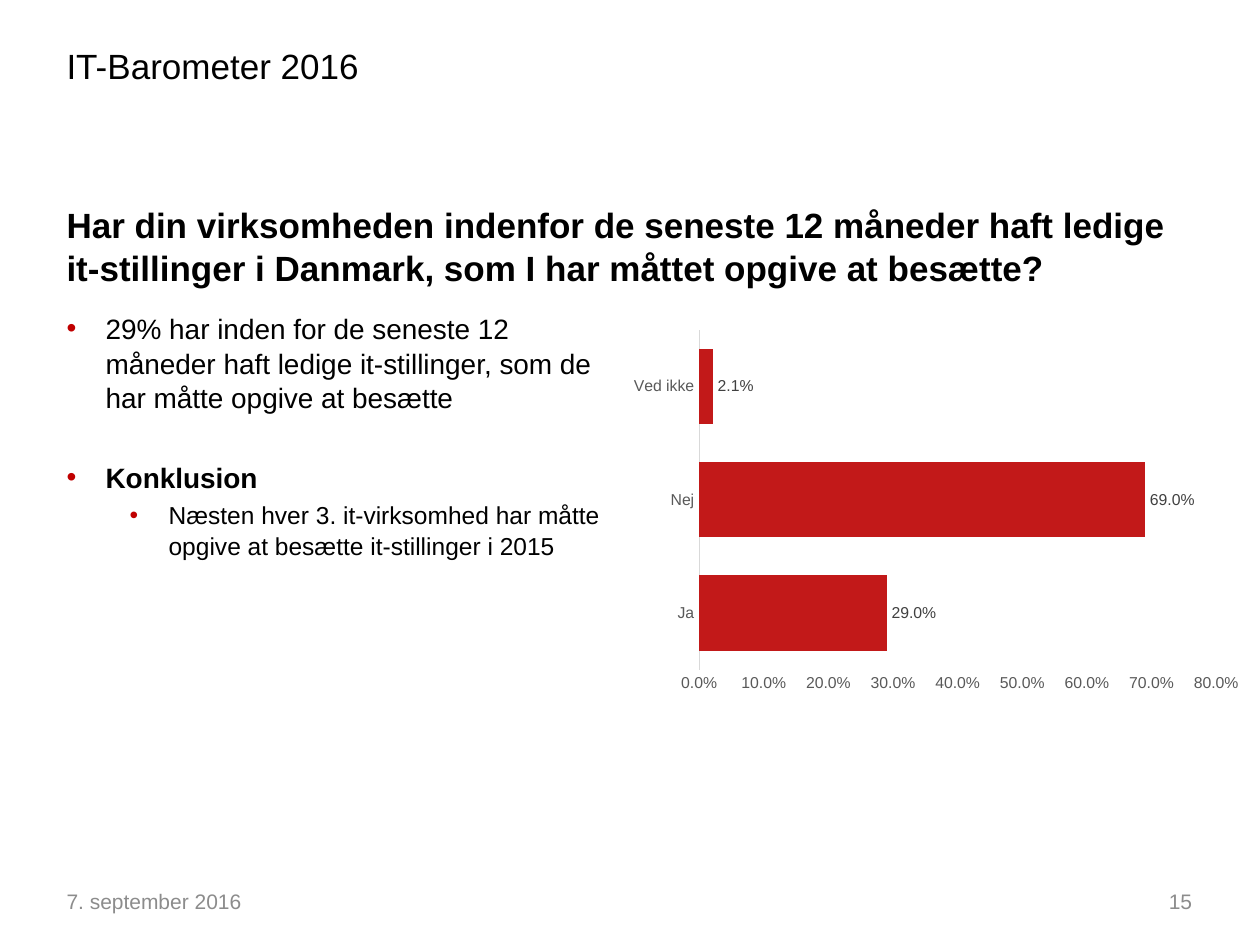
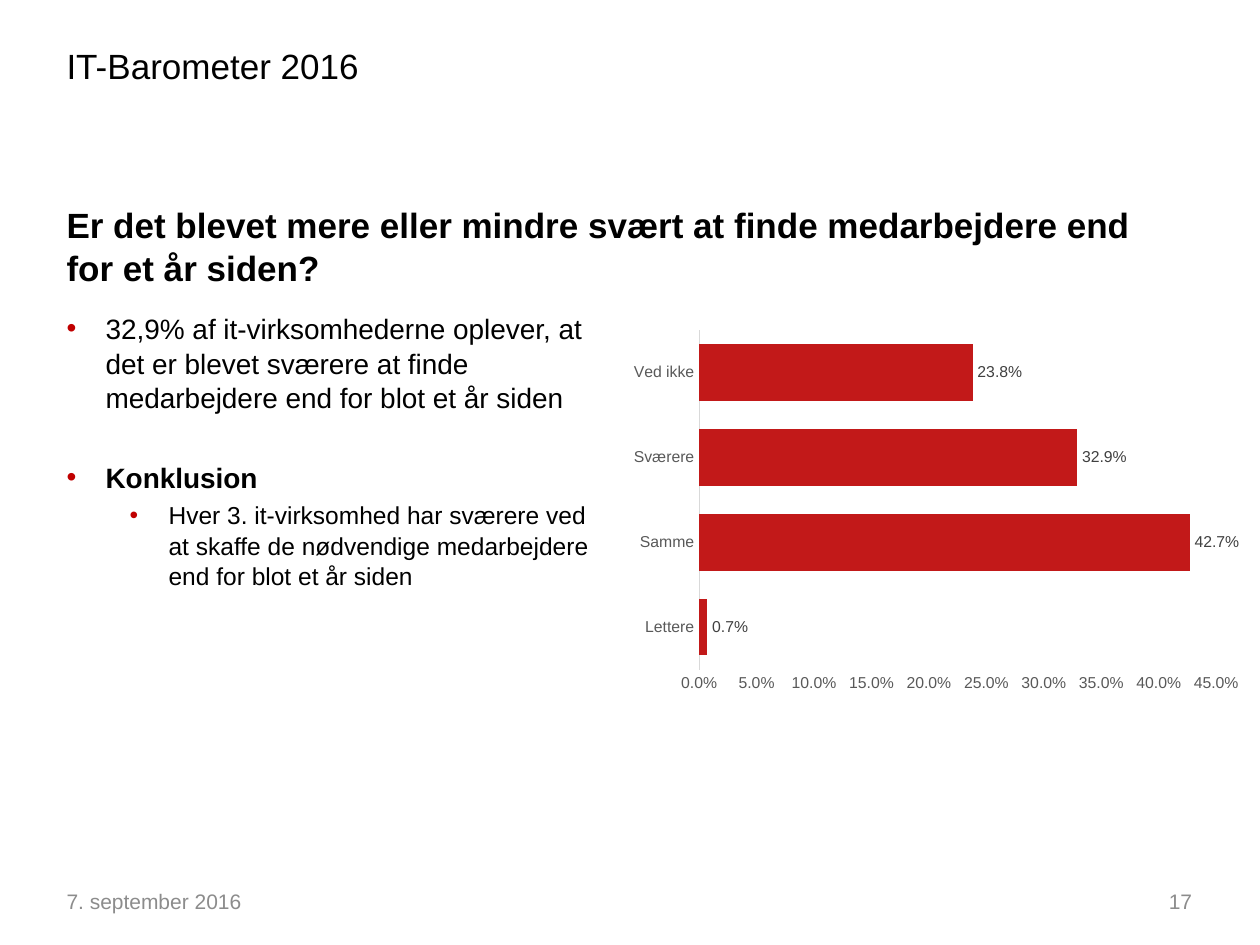
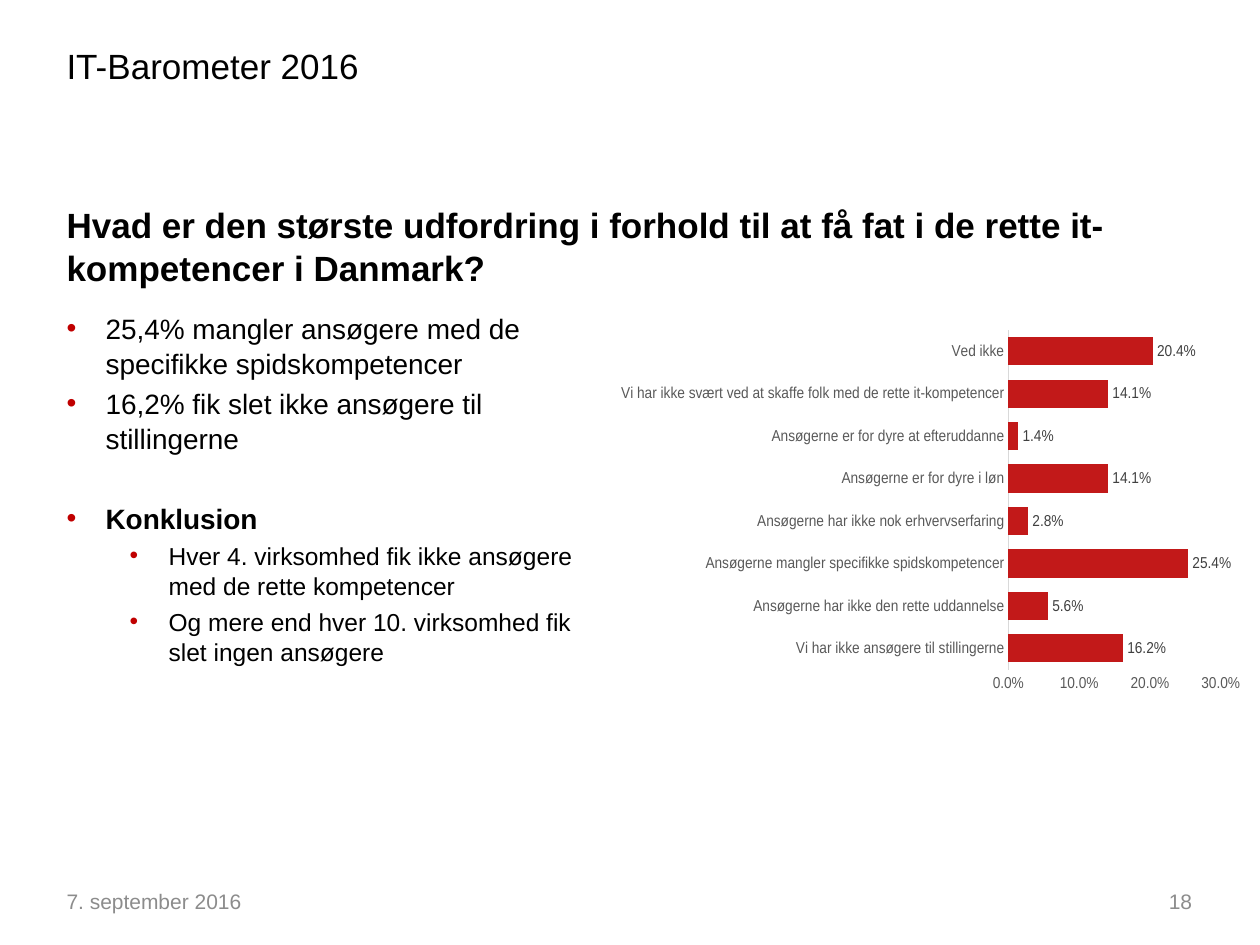
"""Build three IT-Barometer 2016 survey slides."""
from dataclasses import dataclass, field
from typing import Any

from lxml.etree import SubElement
from pptx import Presentation
from pptx.chart.data import CategoryChartData
from pptx.dml.color import RGBColor
from pptx.enum.chart import XL_CHART_TYPE, XL_LABEL_POSITION, XL_TICK_MARK
from pptx.enum.text import MSO_ANCHOR, PP_ALIGN
from pptx.oxml.ns import qn
from pptx.util import Inches, Pt

WIDTH, HEIGHT = Inches(10), Inches(7.5)
COLUMN, ROW = WIDTH / 100, HEIGHT / 75
PERCENT = "0.0%"


@dataclass(frozen=True)
class Theme:
    """Hold the colours, font and type sizes of the deck."""
    font: str = "Arial"
    ink: str = "000000"
    footer: str = "8C8C8C"
    bullet: str = "C00000"
    bar: str = "C21919"
    axis_text: str = "595959"
    label_text: str = "404040"
    axis_line: str = "D9D9D9"
    heading_size: int = 20
    point_size: int = 16
    detail_size: int = 14
    footer_size: int = 12
    chart_size: int = 10
    axis_size: int = 9
    line_spacing: float = 1.04


THEME = Theme()


@dataclass(frozen=True)
class Area:
    """Place an element in grid columns and rows."""
    left: float
    top: float
    columns: float
    rows: float

    def box(self) -> tuple[int, int, int, int]:
        """Return the place in slide units."""
        return (round(self.left * COLUMN), round(self.top * ROW),
                round(self.columns * COLUMN), round(self.rows * ROW))


@dataclass(frozen=True)
class TextStyle:
    """Describe how a line of text looks."""
    size: int
    color: str = THEME.ink
    bold: bool = False
    align: PP_ALIGN = PP_ALIGN.LEFT
    anchor: MSO_ANCHOR = MSO_ANCHOR.TOP


@dataclass(frozen=True)
class BulletStyle:
    """Describe a bullet level."""
    text: TextStyle
    level: int
    indent: float
    before: float


@dataclass(frozen=True)
class Survey:
    """Hold one question with its findings and answers."""
    number: int
    question: str
    findings: list[str]
    conclusions: list[str]
    answers: dict[str, float] = field(default_factory=dict)


DATE_AREA = Area(4.3, 69.5, 23.3, 4)
NUMBER_AREA = Area(72.3, 69.5, 23.3, 4)
HEADER_AREA = Area(4.3, 2.9, 31.7, 4)
QUESTION_AREA = Area(4.3, 15.5, 90, 5.5)
FINDINGS_AREA = Area(4.3, 24.1, 44.9, 35.4)
CHART_AREA = Area(49.3, 25.6, 50, 30)

HEADER = TextStyle(THEME.heading_size)
QUESTION = TextStyle(THEME.heading_size, bold=True)
DATE = TextStyle(THEME.footer_size, THEME.footer, anchor=MSO_ANCHOR.MIDDLE)
NUMBER = TextStyle(THEME.footer_size, THEME.footer, align=PP_ALIGN.RIGHT, anchor=MSO_ANCHOR.MIDDLE)
FINDING = BulletStyle(TextStyle(THEME.point_size), 0, 0.31, 3.2)
CONCLUSION_HEAD = BulletStyle(TextStyle(THEME.point_size, bold=True), 0, 0.31, 25.5)
CONCLUSION = BulletStyle(TextStyle(THEME.detail_size), 1, 0.81, 2.8)
HANGING = 0.31

SURVEYS = [
    Survey(
        15,
        "Har din virksomheden indenfor de seneste 12 måneder haft ledige it-stillinger i Danmark, "
        "som I har måttet opgive at besætte?",
        ["29% har inden for de seneste 12 måneder haft ledige it-stillinger, som de har måtte "
         "opgive at besætte"],
        ["Næsten hver 3. it-virksomhed har måtte opgive at besætte it-stillinger i 2015"],
        {"Ja": 0.29, "Nej": 0.69, "Ved ikke": 0.021},
    ),
    Survey(
        17,
        "Er det blevet mere eller mindre svært at finde medarbejdere end for et år siden?",
        ["32,9% af it-virksomhederne oplever, at det er blevet sværere at finde medarbejdere "
         "end for blot et år siden"],
        ["Hver 3. it-virksomhed har sværere ved at skaffe de nødvendige medarbejdere end for "
         "blot et år siden"],
        {"Lettere": 0.007, "Samme": 0.427, "Sværere": 0.329, "Ved ikke": 0.238},
    ),
    Survey(
        18,
        "Hvad er den største udfordring i forhold til at få fat i de rette it-kompetencer i Danmark?",
        ["25,4% mangler ansøgere med de specifikke spidskompetencer",
         "16,2% fik slet ikke ansøgere til stillingerne"],
        ["Hver 4. virksomhed fik ikke ansøgere med de rette kompetencer",
         "Og mere end hver 10. virksomhed fik slet ingen ansøgere"],
        {
            "Vi har ikke ansøgere til stillingerne": 0.162,
            "Ansøgerne har ikke den rette uddannelse": 0.056,
            "Ansøgerne mangler specifikke spidskompetencer": 0.254,
            "Ansøgerne har ikke nok erhvervserfaring": 0.028,
            "Ansøgerne er for dyre i løn": 0.141,
            "Ansøgerne er for dyre at efteruddanne": 0.014,
            "Vi har ikke svært ved at skaffe folk med de rette it-kompetencer": 0.141,
            "Ved ikke": 0.204,
        },
    ),
]


def apply(target: Any, values: dict[str, Any]) -> None:
    """Set each named attribute on the target."""
    for name, value in values.items():
        setattr(target, name, value)


def style_font(font: Any, size: int, color: str, bold: bool = False) -> None:
    """Give a font the theme's face with a size and colour."""
    apply(font, {"name": THEME.font, "size": Pt(size), "bold": bold})
    font.color.rgb = RGBColor.from_string(color)


def add_frame(slide: Any, area: Area, anchor: MSO_ANCHOR) -> Any:
    """Add a wrapping text frame."""
    frame = slide.shapes.add_textbox(*area.box()).text_frame
    apply(frame, {"word_wrap": True, "vertical_anchor": anchor})
    return frame


def write(paragraph: Any, text: str, style: TextStyle) -> None:
    """Fill a paragraph with styled text."""
    run = paragraph.add_run()
    run.text = text
    apply(paragraph, {"alignment": style.align, "line_spacing": THEME.line_spacing})
    style_font(run.font, style.size, style.color, style.bold)


def add_text(slide: Any, area: Area, text: str, style: TextStyle) -> None:
    """Add a box with one paragraph."""
    write(add_frame(slide, area, style.anchor).paragraphs[0], text, style)


def add_bullet(paragraph: Any, style: BulletStyle) -> None:
    """Give a paragraph a coloured hanging bullet."""
    properties = paragraph._p.get_or_add_pPr()
    properties.set("marL", str(Inches(style.indent)))
    properties.set("indent", str(-Inches(HANGING)))
    color = SubElement(properties, qn("a:buClr"))
    SubElement(color, qn("a:srgbClr"), val=THEME.bullet)
    SubElement(properties, qn("a:buFont"), typeface=THEME.font)
    SubElement(properties, qn("a:buChar"), char="•")


def add_findings(slide: Any, survey: Survey) -> None:
    """List the findings and the conclusions drawn from them."""
    frame = add_frame(slide, FINDINGS_AREA, MSO_ANCHOR.TOP)
    entries = [(text, FINDING) for text in survey.findings]
    entries.append(("Konklusion", CONCLUSION_HEAD))
    entries += [(text, CONCLUSION) for text in survey.conclusions]
    for position, (text, style) in enumerate(entries):
        paragraph = frame.add_paragraph() if position else frame.paragraphs[0]
        add_bullet(paragraph, style)
        apply(paragraph, {"level": style.level, "space_before": Pt(style.before if position else 0)})
        write(paragraph, text, style.text)


def add_answers(slide: Any, answers: dict[str, float]) -> None:
    """Chart the share of each answer as horizontal bars."""
    data = CategoryChartData(number_format=PERCENT)
    data.categories = list(answers)
    data.add_series("Series 1", list(answers.values()))
    chart = slide.shapes.add_chart(XL_CHART_TYPE.BAR_CLUSTERED, *CHART_AREA.box(), data).chart
    apply(chart, {"has_legend": False, "has_title": False})
    style_font(chart.font, THEME.chart_size, THEME.ink)

    for axis in (chart.category_axis, chart.value_axis):
        apply(axis, {"has_major_gridlines": False, "major_tick_mark": XL_TICK_MARK.NONE,
                     "minor_tick_mark": XL_TICK_MARK.NONE})
        style_font(axis.tick_labels.font, THEME.axis_size, THEME.axis_text)
    category_line = chart.category_axis.format.line
    category_line.color.rgb = RGBColor.from_string(THEME.axis_line)
    category_line.width = Pt(0.75)
    chart.value_axis.format.line.fill.background()
    number_format = {"number_format": PERCENT, "number_format_is_linked": False}
    apply(chart.value_axis.tick_labels, number_format)

    plot = chart.plots[0]
    apply(plot, {"gap_width": 50, "vary_by_categories": False})
    bars = plot.series[0]
    bars.format.fill.solid()
    bars.format.fill.fore_color.rgb = RGBColor.from_string(THEME.bar)
    labels = bars.data_labels
    apply(labels, number_format | {"show_value": True, "position": XL_LABEL_POSITION.OUTSIDE_END})
    style_font(labels.font, THEME.axis_size, THEME.label_text)


def add_survey(presentation: Any, survey: Survey) -> None:
    """Add one survey slide."""
    slide = presentation.slides.add_slide(presentation.slide_layouts[6])
    add_text(slide, DATE_AREA, "7. september 2016", DATE)
    add_text(slide, HEADER_AREA, "IT-Barometer 2016", HEADER)
    add_text(slide, NUMBER_AREA, str(survey.number), NUMBER)
    add_text(slide, QUESTION_AREA, survey.question, QUESTION)
    add_findings(slide, survey)
    add_answers(slide, survey.answers)


def main() -> None:
    """Build and save the presentation."""
    presentation = Presentation()
    apply(presentation, {"slide_width": WIDTH, "slide_height": HEIGHT})
    for survey in SURVEYS:
        add_survey(presentation, survey)
    presentation.save("out.pptx")


if __name__ == "__main__":
    main()
